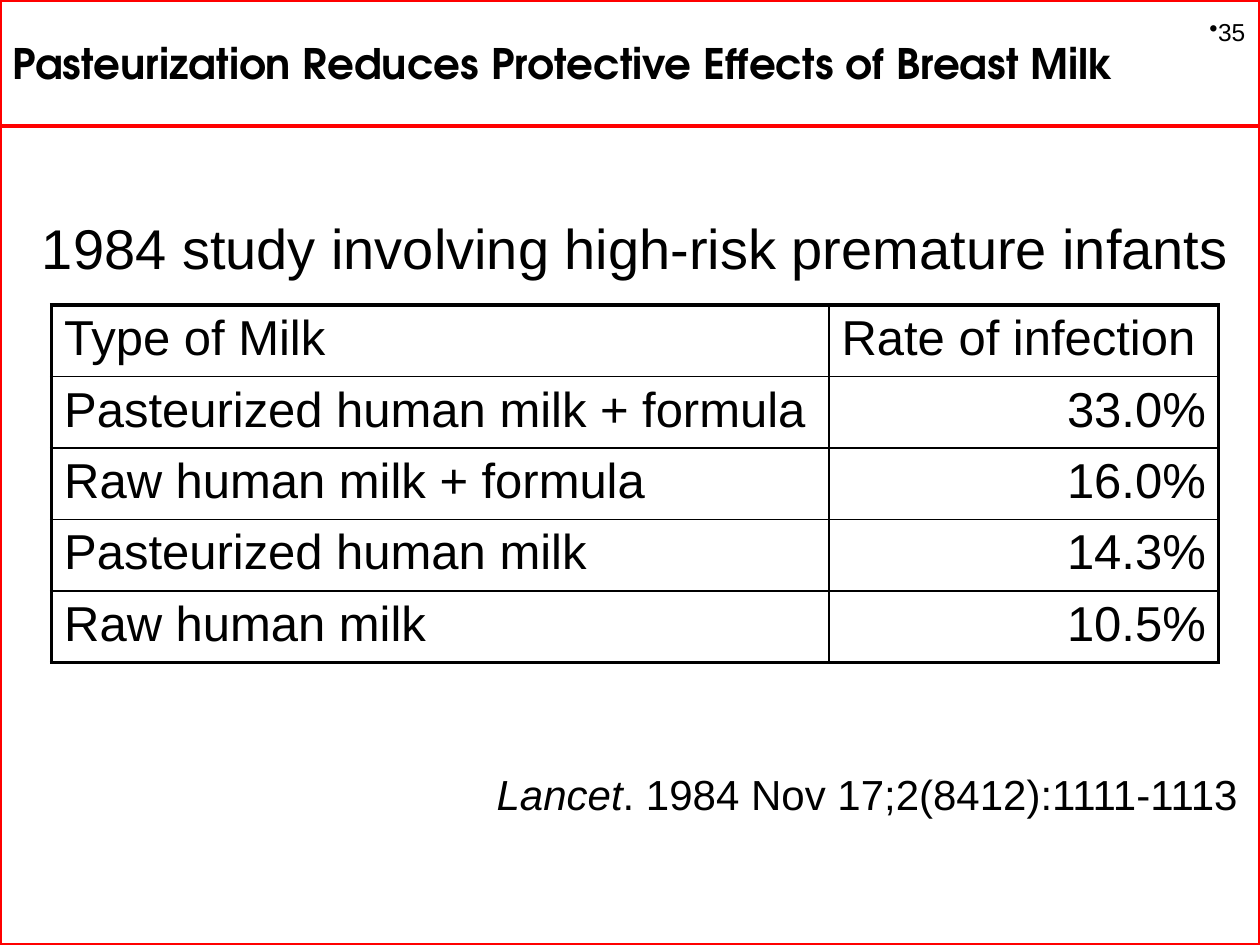
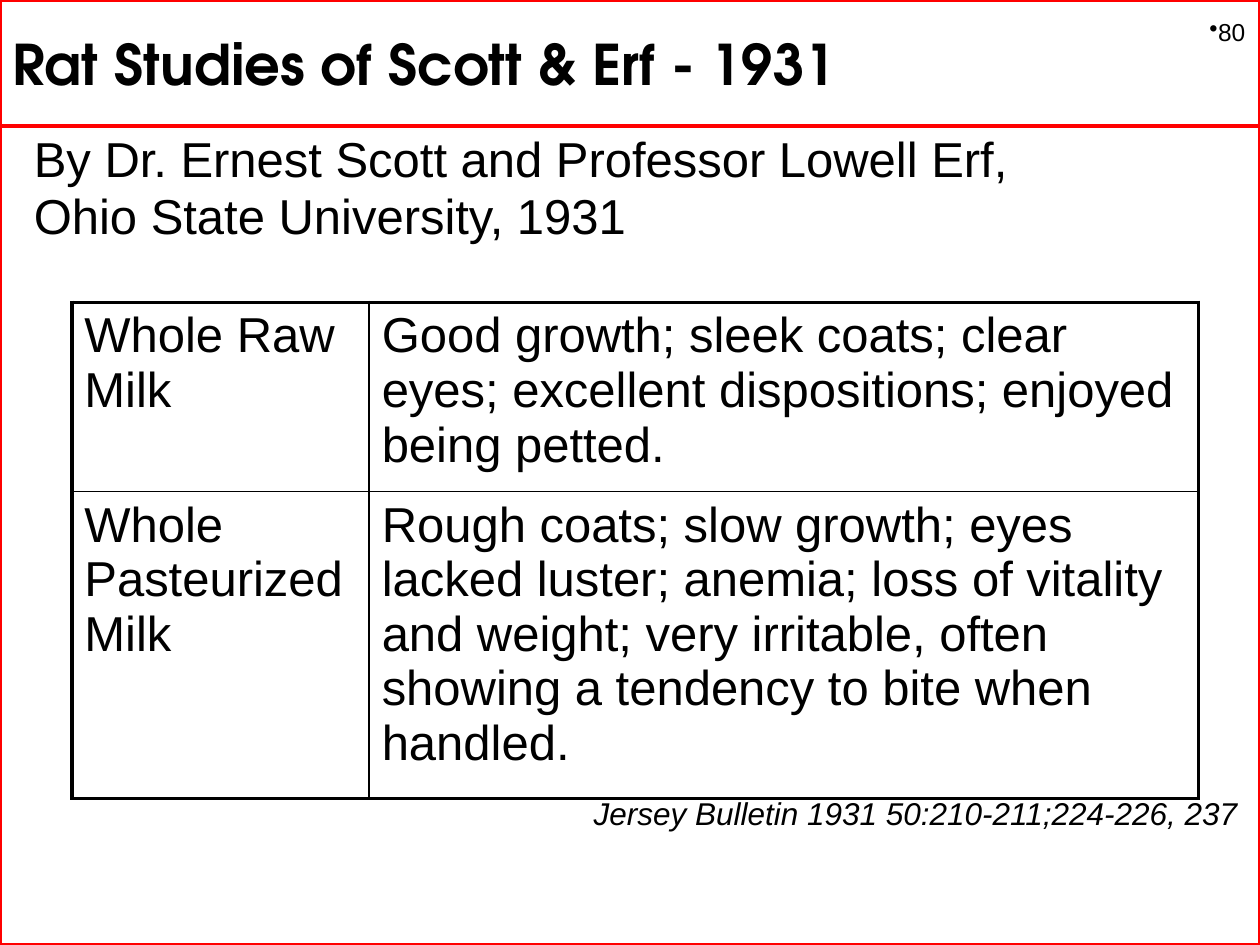
from lxml.etree import SubElement
from pptx import Presentation
from pptx.dml.color import RGBColor
from pptx.enum.shapes import MSO_SHAPE
from pptx.enum.text import MSO_ANCHOR, PP_ALIGN
from pptx.oxml import parse_xml
from pptx.oxml.ns import nsdecls, qn
from pptx.util import Inches, Pt

RED, BLACK = "FF0000", "000000"
BODY_FONT, TITLE_FONT = "Arial", "TeX Gyre Adventor"
LEFT, CENTER, RIGHT = PP_ALIGN.LEFT, PP_ALIGN.CENTER, PP_ALIGN.RIGHT
THICK, THIN = 2.25, 1

SLIDES = [
    {
        "number": "35",
        "title": ("Pasteurization Reduces Protective Effects of Breast Milk", 24),
        "heading": {"text": "1984 study involving high-risk premature infants",
                    "top": 1.68, "height": 0.6, "size": 32, "align": CENTER},
        "source": {"italic": "Lancet", "plain": ". 1984 Nov 17;2(8412):1111-1113",
                   "top": 6.05, "size": 24},
        "table": {"at": (0.41, 2.42), "columns": (6.17, 3.09),
                  "heights": [0.53] * 5, "values_from_row": 1,
                  "rows": [("Type of Milk", "Rate of infection"),
                           ("Pasteurized human milk + formula", "33.0%"),
                           ("Raw human milk + formula", "16.0%"),
                           ("Pasteurized human milk", "14.3%"),
                           ("Raw human milk", "10.5%")]},
    },
    {
        "number": "80",
        "title": ("Rat Studies of Scott & Erf - 1931", 32),
        "heading": {"text": "By Dr. Ernest Scott and Professor Lowell Erf,\v"
                            "Ohio State University, 1931",
                    "top": 1, "height": 1, "size": 28, "align": LEFT},
        "source": {"italic": "Jersey Bulletin 1931 50:210-211;224-226, 237", "plain": "",
                   "top": 6.25, "size": 18},
        "table": {"at": (0.57, 2.4), "columns": (2.36, 6.58),
                  "heights": [1.5, 2.43], "values_from_row": 2,
                  "rows": [("Whole Raw Milk",
                            "Good growth; sleek coats; clear eyes; excellent dispositions; "
                            "enjoyed being petted."),
                           ("Whole Pasteurized Milk",
                            "Rough coats; slow growth; eyes lacked luster; anemia; loss of "
                            "vitality and weight; very irritable, often showing a tendency "
                            "to bite when handled.")]},
    },
]


def color(value):
    return RGBColor.from_string(value)


def style(para, size, font=BODY_FONT, align=LEFT, bold=False):
    para.alignment = align
    para.font.size = Pt(size)
    para.font.name = font
    para.font.bold = bold
    para.font.color.rgb = color(BLACK)


def add_red_box(page, height):
    box = page.shapes.add_shape(MSO_SHAPE.RECTANGLE, 0, 0, Inches(10), Inches(height))
    box.shadow.inherit = False
    box.fill.background()
    box.line.color.rgb = color(RED)
    box.line.width = Pt(THICK)
    return box


def add_text_box(page, left, top, width, height):
    box = page.shapes.add_textbox(Inches(left), Inches(top), Inches(width), Inches(height))
    box.text_frame.word_wrap = True
    return box.text_frame


def add_number(page, number):
    frame = add_text_box(page, 9.5, 0, 0.5, 0.5)
    frame.vertical_anchor = MSO_ANCHOR.MIDDLE
    para = frame.paragraphs[0]
    para.text = number
    SubElement(para._p.get_or_add_pPr(), qn("a:buChar"), char="•")
    style(para, 14)


def add_title(page, text, size):
    frame = add_red_box(page, 1).text_frame
    frame.word_wrap = True
    frame.vertical_anchor = MSO_ANCHOR.MIDDLE
    frame.text = text
    style(frame.paragraphs[0], size, TITLE_FONT, bold=True)


def add_heading(page, heading):
    frame = add_text_box(page, 0.17, heading["top"], 9.75, heading["height"])
    frame.text = heading["text"]
    para = frame.paragraphs[0]
    style(para, heading["size"], align=heading["align"])
    para.line_spacing = 0.97


def add_source(page, source):
    para = add_text_box(page, 0.17, source["top"], 9.75, 0.5).paragraphs[0]
    style(para, source["size"], align=RIGHT)
    for text, italic in ((source["italic"], True), (source["plain"], False)):
        if text:
            span = para.add_run()
            span.text = text
            span.font.italic = italic


def set_borders(cell, widths):
    properties = cell._tc.get_or_add_tcPr()
    for place, (side, width) in enumerate(widths.items()):
        properties.insert(place, parse_xml(
            f'<a:ln{side} {nsdecls("a")} w="{Pt(width)}"><a:solidFill>'
            f'<a:srgbClr val="{BLACK}"/></a:solidFill></a:ln{side}>'))


def add_table(page, content):
    rows, columns, heights = content["rows"], content["columns"], content["heights"]
    left, top = content["at"]
    table = page.shapes.add_table(len(rows), len(columns), Inches(left), Inches(top),
                                  Inches(sum(columns)), Inches(sum(heights))).table
    table.first_row = table.horz_banding = False
    for column, width in zip(table.columns, columns):
        column.width = Inches(width)
    last_row, last_column = len(rows) - 1, len(columns) - 1
    for r, texts in enumerate(rows):
        table.rows[r].height = Inches(heights[r])
        for c, text in enumerate(texts):
            cell = table.cell(r, c)
            cell.text = text
            is_value = c > 0 and r >= content["values_from_row"]
            style(cell.text_frame.paragraphs[0], 28, align=RIGHT if is_value else LEFT)
            cell.fill.background()
            outer = {"L": c == 0, "R": c == last_column, "T": r == 0, "B": r == last_row}
            set_borders(cell, {side: THICK if edge else THIN for side, edge in outer.items()})


def main():
    deck = Presentation()
    deck.slide_width, deck.slide_height = Inches(10), Inches(7.5)
    for content in SLIDES:
        page = deck.slides.add_slide(deck.slide_layouts[6])
        add_red_box(page, 7.5)
        add_number(page, content["number"])
        add_title(page, *content["title"])
        add_heading(page, content["heading"])
        add_source(page, content["source"])
        add_table(page, content["table"])
    deck.save("out.pptx")


if __name__ == "__main__":
    main()
